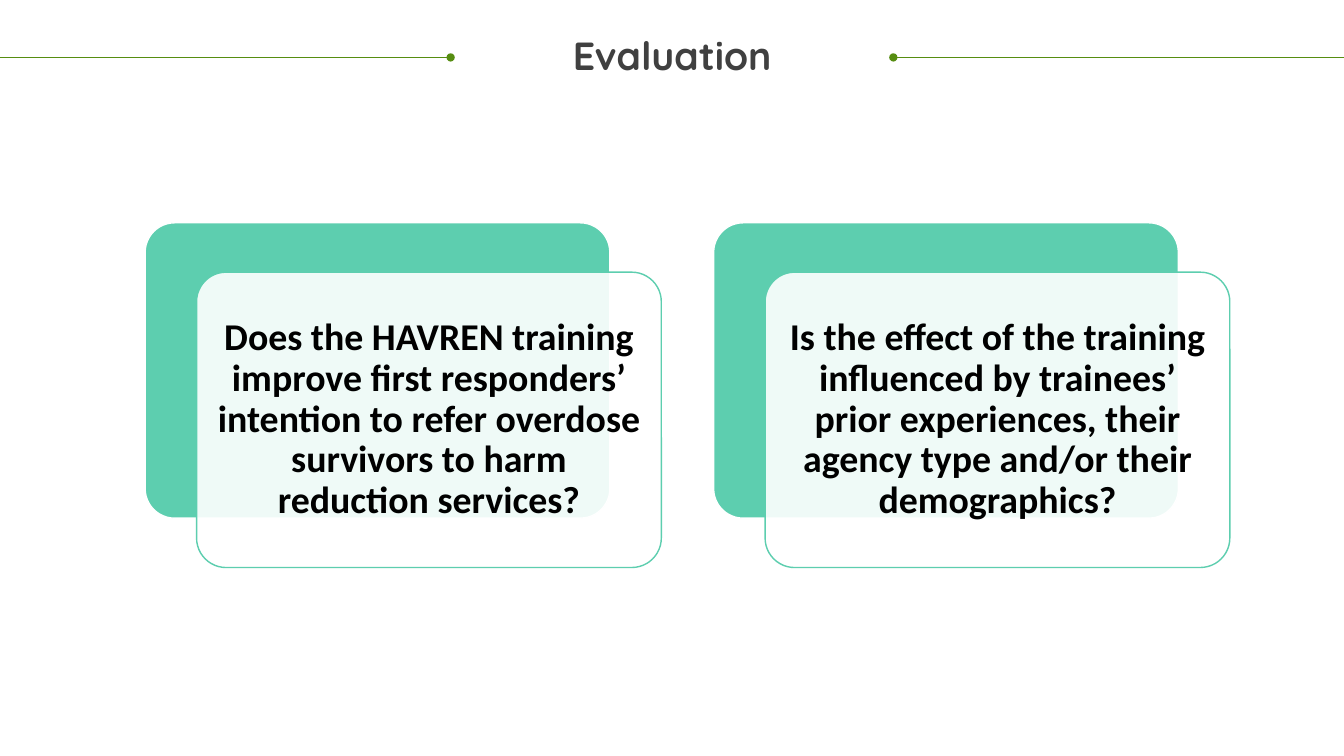
from lxml.etree import SubElement
from pptx import Presentation
from pptx.dml.color import RGBColor
from pptx.enum.shapes import MSO_CONNECTOR, MSO_SHAPE
from pptx.enum.text import MSO_ANCHOR, PP_ALIGN
from pptx.oxml.ns import qn
from pptx.util import Inches, Pt

COLORS = {
    "white": "FFFFFF",
    "mint": "5DCEAF",
    "leaf": "568D11",
    "charcoal": "404040",
    "black": "000000",
}
WIDTH, HEIGHT = Inches(13.33), Inches(7.5)

CARD_LEFT, CARD_TOP = 10.8, 29.47
CARD_WIDTH, CARD_HEIGHT = 34.58, 39.07
CARD_PITCH = 42.3
OFFSET_X, OFFSET_Y = 3.83, 6.53
INSET_X, INSET_Y = 0.64, 1.13
RULE_Y = 7.6

QUESTIONS = [
    "Does the HAVREN training improve first responders’ intention to refer "
    "overdose survivors to harm reduction services?",
    "Is the effect of the training influenced by trainees’ prior experiences, "
    "their agency type and/or their demographics?",
]


def color(name):
    return RGBColor.from_string(COLORS[name])


def across(percent):
    return round(WIDTH * percent / 100)


def down(percent):
    return round(HEIGHT * percent / 100)


def area(left, top, width, height):
    return across(left), down(top), across(width), down(height)


def add_text(slide, text, box, *, size, font, fill, margin=0, anchor=MSO_ANCHOR.TOP):
    frame = slide.shapes.add_textbox(*area(*box)).text_frame
    frame.word_wrap = True
    frame.vertical_anchor = anchor
    frame.margin_left = frame.margin_right = Inches(margin)
    frame.margin_top = frame.margin_bottom = Inches(margin)
    paragraph = frame.paragraphs[0]
    paragraph.alignment = PP_ALIGN.CENTER
    paragraph.line_spacing = 0.9
    run = paragraph.add_run()
    run.text = text
    run.font.size = Pt(size)
    run.font.name = font
    run.font.bold = True
    run.font.color.rgb = color(fill)


def add_panel(slide, left, top, fill, outline, opacity=100):
    box = area(left, top, CARD_WIDTH, CARD_HEIGHT)
    shape = slide.shapes.add_shape(MSO_SHAPE.ROUNDED_RECTANGLE, *box)
    shape.shadow.inherit = False
    shape.adjustments[0] = 0.1
    shape.fill.solid()
    shape.fill.fore_color.rgb = color(fill)
    shape.line.color.rgb = color(outline)
    shape.line.width = Pt(1)
    if opacity < 100:
        fill_color = shape.fill._xPr.find(qn("a:solidFill"))[0]
        SubElement(fill_color, qn("a:alpha")).set("val", str(opacity * 1000))


def add_rule(slide, start, end, dot):
    rule = slide.shapes.add_connector(
        MSO_CONNECTOR.STRAIGHT, across(start), down(RULE_Y), across(end), down(RULE_Y)
    )
    rule.line.color.rgb = color("leaf")
    rule.line.width = Pt(0.5)
    SubElement(rule.line._get_or_add_ln(), qn(dot)).set("type", "oval")
    SubElement(rule._element.spPr, qn("a:effectLst"))


def add_question_card(slide, left, question):
    front_left, front_top = left + OFFSET_X, CARD_TOP + OFFSET_Y
    add_panel(slide, left, CARD_TOP, "mint", "white")
    add_panel(slide, front_left, front_top, "white", "mint", opacity=90)
    text_box = (
        front_left + INSET_X,
        front_top + INSET_Y,
        CARD_WIDTH - 2 * INSET_X,
        CARD_HEIGHT - 2 * INSET_Y,
    )
    add_text(slide, question, text_box, size=27, font="Calibri", fill="black",
             margin=0.11, anchor=MSO_ANCHOR.MIDDLE)


def main():
    presentation = Presentation()
    presentation.slide_width, presentation.slide_height = WIDTH, HEIGHT
    slide = presentation.slides.add_slide(presentation.slide_layouts[6])

    add_rule(slide, 66.47, 100, "a:headEnd")
    add_text(slide, "Evaluation", (1.88, 4.8, 96.25, 5.6),
             size=28, font="Quicksand", fill="charcoal")
    add_rule(slide, 0, 33.53, "a:tailEnd")
    for index, question in enumerate(QUESTIONS):
        add_question_card(slide, CARD_LEFT + index * CARD_PITCH, question)

    presentation.save("out.pptx")


if __name__ == "__main__":
    main()
